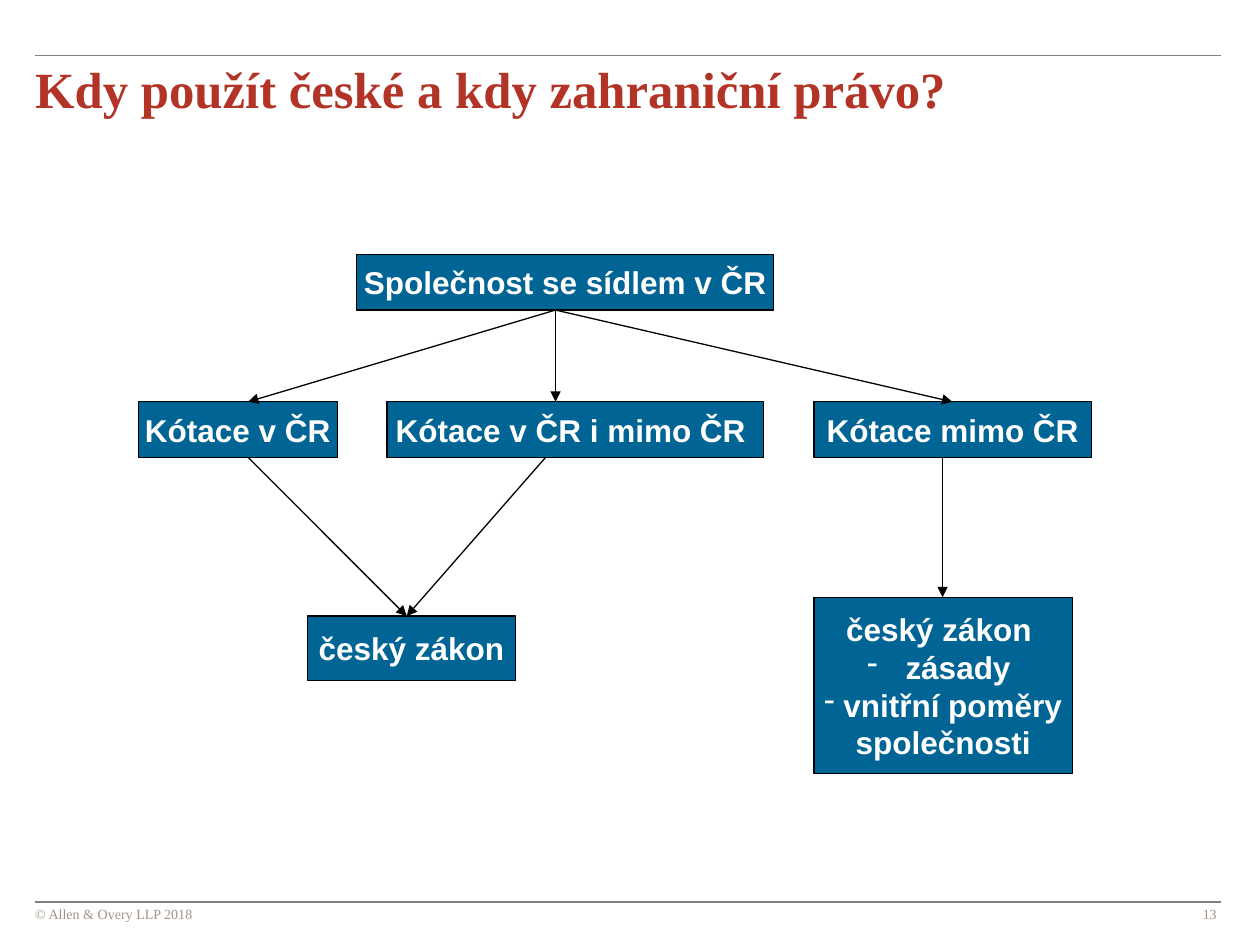
"""Build the slide on when Czech and when foreign law applies."""
from lxml import etree
from pptx import Presentation
from pptx.dml.color import RGBColor
from pptx.enum.shapes import MSO_CONNECTOR, MSO_SHAPE
from pptx.enum.text import MSO_ANCHOR, PP_ALIGN
from pptx.oxml.ns import qn
from pptx.util import Cm, Pt

STRAIGHT = MSO_CONNECTOR.STRAIGHT
RECTANGLE = MSO_SHAPE.RECTANGLE
MIDDLE = MSO_ANCHOR.MIDDLE
LEFT, CENTER, RIGHT = PP_ALIGN.LEFT, PP_ALIGN.CENTER, PP_ALIGN.RIGHT
RED = RGBColor(0xB2, 0x34, 0x27)
BLUE = RGBColor(0x00, 0x65, 0x95)
GRAY = RGBColor(0x80, 0x80, 0x80)
TAUPE = RGBColor(0xA1, 0x95, 0x89)
BLACK = RGBColor(0x00, 0x00, 0x00)
WHITE = RGBColor(0xFF, 0xFF, 0xFF)

deck = Presentation()
deck.slide_width, deck.slide_height = Cm(25.4), Cm(19.05)
page = deck.slides.add_slide(deck.slide_layouts[6])


def add_line(start, end, color, width):
    line = page.shapes.add_connector(STRAIGHT, *map(Cm, start + end))
    line.line.color.rgb = color
    line.line.width = Pt(width)
    etree.SubElement(line._element.spPr, qn("a:effectLst"))
    return line


def style_paragraph(para, align, font, size, color, bold):
    para.alignment = align
    para.font.name = font
    para.font.size = Pt(size)
    para.font.color.rgb = color
    para.font.bold = bold


for rule_y in (1.12, 18.19):
    add_line((0.71, rule_y), (24.61, rule_y), GRAY, 1)

labels = [
    ("© Allen & Overy LLP 2018", (0.71, 18.26, 18.21, 0.33), LEFT, 8, TAUPE, False),
    ("13", (6.32, 18.26, 18.21, 0.33), RIGHT, 8, TAUPE, False),
    ("Kdy použít české a kdy zahraniční právo?", (0.71, 1.17, 23.8, 1.24), LEFT, 29, RED, True),
]
for text, place, align, size, color, bold in labels:
    frame = page.shapes.add_textbox(*map(Cm, place)).text_frame
    frame.word_wrap = True
    frame.margin_left = frame.margin_right = frame.margin_top = frame.margin_bottom = 0
    frame.text = text
    style_paragraph(frame.paragraphs[0], align, "Times New Roman", size, color, bold)

company_top, listing_top, law_top, rules_top = 5.13, 8.1, 12.42, 12.04
box_height = 1.12
boxes = [
    ("Společnost se sídlem v ČR", (7.19, company_top, 8.41, box_height)),
    ("Kótace v ČR", (2.79, listing_top, 4.01, box_height)),
    ("Kótace v ČR i mimo ČR ", (7.8, listing_top, 7.59, box_height)),
    ("Kótace mimo ČR", (16.41, listing_top, 5.59, box_height)),
    ("český zákon", (6.2, law_top, 4.19, 1.3)),
    ("český zákon \n zásady \n vnitřní poměry\nspolečnosti", (16.41, rules_top, 5.21, 3.56)),
]
bullet_indents = {" zásady ": Cm(0.6), " vnitřní poměry": 0}
for text, place in boxes:
    box = page.shapes.add_shape(RECTANGLE, *map(Cm, place))
    box.shadow.inherit = False
    box.fill.solid()
    box.fill.fore_color.rgb = BLUE
    box.line.color.rgb = BLACK
    box.line.width = Pt(0.75)
    frame = box.text_frame
    frame.word_wrap = False
    frame.vertical_anchor = MIDDLE
    frame.text = text
    for para in frame.paragraphs:
        if para.text in bullet_indents:
            indent = bullet_indents[para.text]
            properties = para._p.get_or_add_pPr()
            properties.set("marL", str(indent))
            properties.set("indent", str(-indent))
            etree.SubElement(properties, qn("a:buChar"), char="-")
        style_paragraph(para, CENTER, "Arial", 18, WHITE, True)

company_bottom = company_top + box_height
listing_bottom = listing_top + box_height
arrows = [((11.2, company_bottom), (x, listing_top)) for x in (5, 11.2, 19.2)]
arrows += [((x, listing_bottom), (8.2, law_top)) for x in (5, 11)]
arrows.append(((19, listing_bottom), (19, rules_top)))
for start, end in arrows:
    arrow = add_line(start, end, BLACK, 0.75)
    etree.SubElement(arrow.line._get_or_add_ln(), qn("a:tailEnd"), type="triangle")

deck.save("out.pptx")
